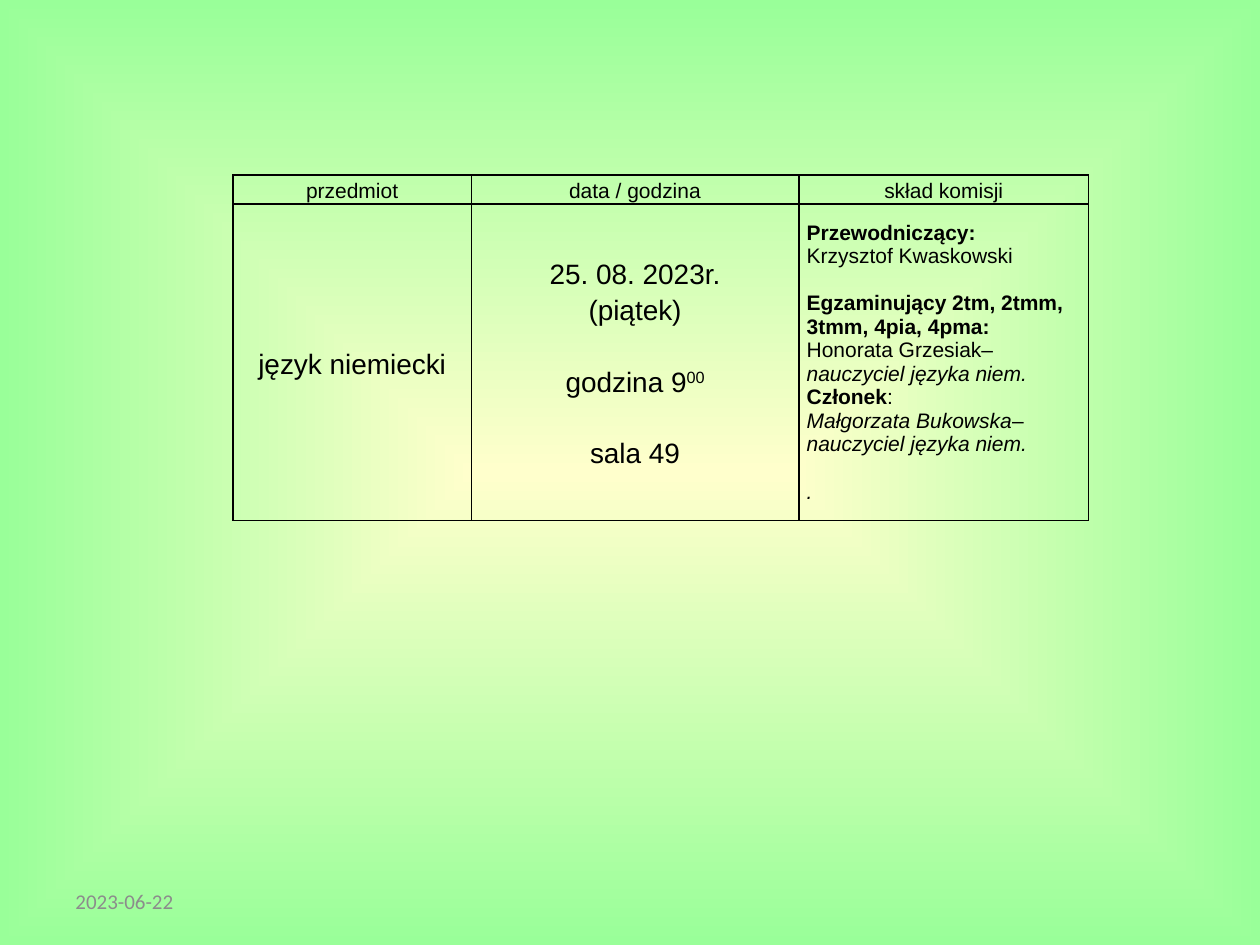
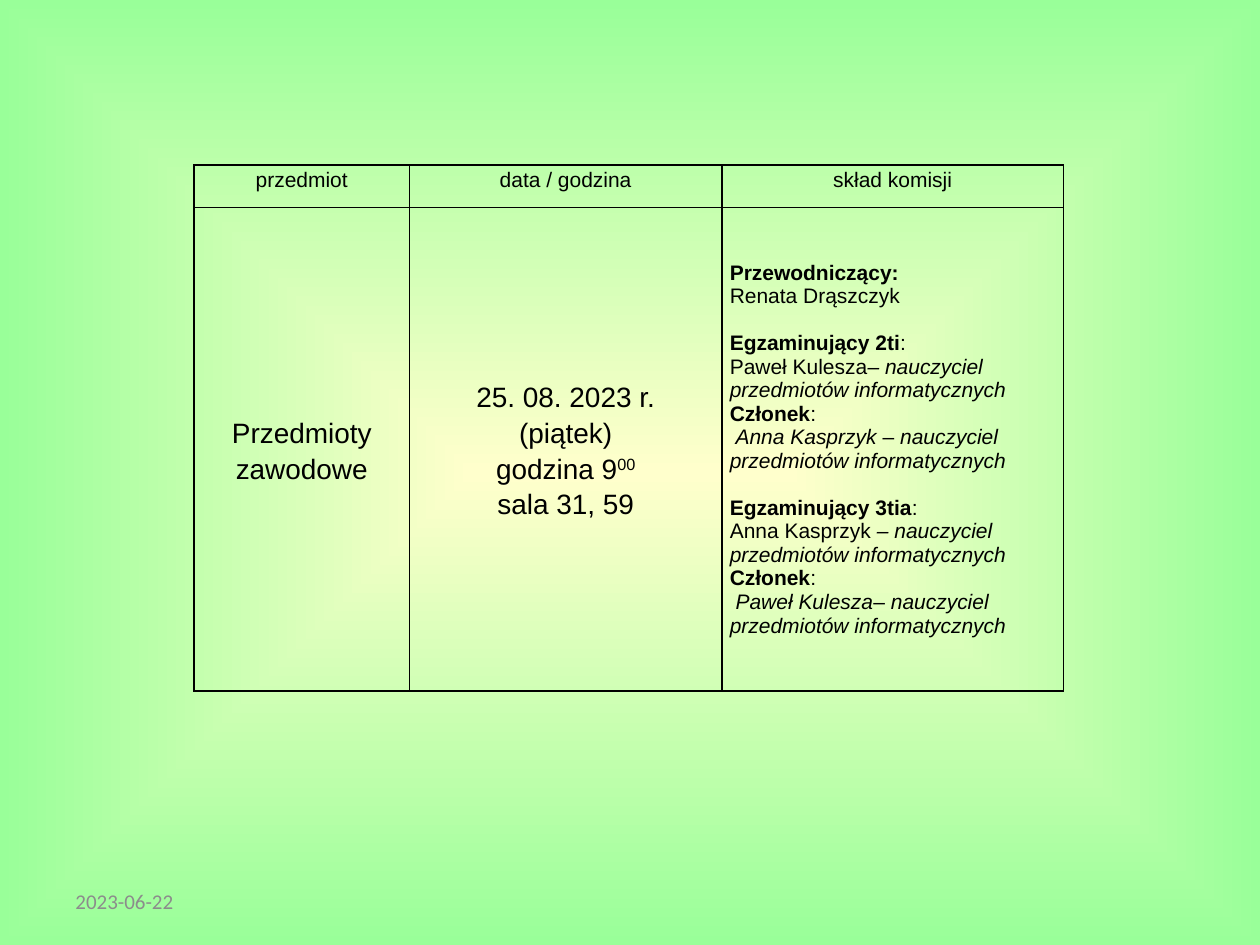
from dataclasses import dataclass

from lxml.etree import SubElement
from pptx import Presentation
from pptx.dml.color import RGBColor
from pptx.enum.text import MSO_ANCHOR, PP_ALIGN
from pptx.oxml.ns import qn
from pptx.util import Pt


@dataclass(frozen=True)
class Theme:
    center: RGBColor = RGBColor(0xFF, 0xFF, 0xCC)
    edge: RGBColor = RGBColor(0x99, 0xFF, 0x99)
    text: RGBColor = RGBColor(0, 0, 0)
    muted: RGBColor = RGBColor(0x8C, 0x8C, 0x8C)
    table_font: str = "Arial"
    date_font: str = "Calibri"
    small: int = 12
    large: int = 16
    spacing: float = 1.15
    border: float = 1
    cell_inset: float = 4.5


@dataclass(frozen=True)
class Line:
    """A paragraph: runs are (text, style), where style holds b, i or ^ (raised)."""
    runs: tuple
    gap: bool = False
    indent: float = 0


def plain(text, gap=False):
    return Line(((text, ""),), gap)


def bold(text, gap=False):
    return Line(((text, "b"),), gap)


def italic(text, gap=False):
    return Line(((text, "i"),), gap)


def role(name, gap=False):
    return Line(((name, "b"), (":", "")), gap)


def hour(gap=False):
    return Line((("godzina 9", ""), ("00", "^")), gap)


class Deck:
    def __init__(self, theme):
        self.theme = theme
        self.presentation = Presentation()
        self.presentation.slide_width = Pt(720)
        self.presentation.slide_height = Pt(540)
        self.slide = None
        self.paint_master()

    def paint_master(self):
        master = self.presentation.slide_master
        fill = master.background.fill
        fill.gradient()
        for stop, color in zip(fill.gradient_stops, (self.theme.center, self.theme.edge)):
            stop.color.rgb = color
        gradient = master.element.xpath("p:cSld/p:bg//a:gradFill")[0]
        gradient.remove(gradient.find(qn("a:lin")))
        shade = SubElement(gradient, qn("a:path"))
        shade.set("path", "shape")
        focus = SubElement(shade, qn("a:fillToRect"))
        for side in "ltrb":
            focus.set(side, "50000")

    def add_slide(self):
        blank = self.presentation.slide_layouts[6]
        self.slide = self.presentation.slides.add_slide(blank)
        self.add_date("2023-06-22")

    def add_date(self, text):
        box = self.slide.shapes.add_textbox(Pt(36), Pt(500.5), Pt(168), Pt(28.75))
        frame = box.text_frame
        frame.word_wrap = True
        frame.vertical_anchor = MSO_ANCHOR.MIDDLE
        frame.text = text
        font = frame.paragraphs[0].runs[0].font
        font.name = self.theme.date_font
        font.size = Pt(self.theme.small)
        font.color.rgb = self.theme.muted

    def add_exam_table(self, left, top, widths, heights, header_anchor, subject, schedule, board):
        frame = self.slide.shapes.add_table(
            2, 3, Pt(left), Pt(top), Pt(sum(widths)), Pt(sum(heights)))
        table = frame.table
        table.first_row = table.horz_banding = False
        for column, width in zip(table.columns, widths):
            column.width = Pt(width)
        for row, height in zip(table.rows, heights):
            row.height = Pt(height)
        for index, heading in enumerate(("przedmiot", "data / godzina", "skład komisji")):
            self.fill_cell(table.cell(0, index), [plain(heading)], self.theme.small,
                           anchor=header_anchor)
        self.fill_cell(table.cell(1, 0), [plain(subject)], self.theme.large)
        self.fill_cell(table.cell(1, 1), schedule, self.theme.large)
        self.fill_cell(table.cell(1, 2), board, self.theme.small, centered=False)

    def fill_cell(self, cell, lines, size, centered=True, anchor=MSO_ANCHOR.MIDDLE):
        self.outline_cell(cell)
        cell.fill.background()
        cell.vertical_anchor = anchor
        cell.margin_left = cell.margin_right = Pt(self.theme.cell_inset)
        cell.margin_top = cell.margin_bottom = 0
        frame = cell.text_frame
        for index, line in enumerate(lines):
            paragraph = frame.add_paragraph() if index else frame.paragraphs[0]
            self.write_line(paragraph, line, size, centered)

    def write_line(self, paragraph, line, size, centered):
        paragraph.alignment = PP_ALIGN.CENTER if centered else PP_ALIGN.LEFT
        if centered:
            paragraph.line_spacing = self.theme.spacing
        if line.gap:
            paragraph.space_before = Pt(20.4 if centered else 13.5)
        if line.indent:
            paragraph._p.get_or_add_pPr().set("indent", str(Pt(line.indent)))
        for text, style in line.runs:
            run = paragraph.add_run()
            run.text = text
            font = run.font
            font.name = self.theme.table_font
            font.size = Pt(size)
            font.color.rgb = self.theme.text
            font.bold = "b" in style
            font.italic = "i" in style
            if "^" in style:
                run._r.get_or_add_rPr().set("baseline", "30000")

    def outline_cell(self, cell):
        properties = cell._tc.get_or_add_tcPr()
        for side in ("lnL", "lnR", "lnT", "lnB"):
            border = SubElement(properties, qn(f"a:{side}"))
            border.set("w", str(Pt(self.theme.border)))
            solid = SubElement(border, qn("a:solidFill"))
            SubElement(solid, qn("a:srgbClr")).set("val", str(self.theme.text))


def add_german_exam(deck):
    deck.add_slide()
    deck.add_exam_table(
        133.2, 100.1, (136.1, 187.2, 165.6), (15.4, 180.7), MSO_ANCHOR.MIDDLE,
        "język niemiecki",
        [plain("25. 08. 2023r."), plain("(piątek)"), hour(gap=True), plain("sala 49", gap=True)],
        [
            bold("Przewodniczący:"),
            plain("Krzysztof Kwaskowski"),
            bold("Egzaminujący 2tm, 2tmm, 3tmm, 4pia, 4pma:", gap=True),
            Line((("Honorata Grzesiak– ", ""), ("nauczyciel języka niem.", "i"))),
            role("Członek"),
            Line((("Małgorzata Bukowska", "i"), ("– ", ""), ("nauczyciel języka niem.", "i"))),
            italic(".", gap=True),
        ])


def add_vocational_exam(deck):
    subject_teacher = "nauczyciel przedmiotów informatycznych"
    member_indent = 3.33
    deck.add_slide()
    deck.add_exam_table(
        110.9, 94.3, (123.1, 178.6, 195.1), (24.3, 276.2), MSO_ANCHOR.TOP,
        "Przedmioty zawodowe",
        [plain("25. 08. 2023 r."), plain("(piątek)"), hour(), plain("sala 31, 59")],
        [
            bold("Przewodniczący:"),
            plain("Renata Drąszczyk"),
            role("Egzaminujący 2ti", gap=True),
            Line((("Paweł Kulesza", ""), (f"– {subject_teacher}", "i"))),
            role("Członek"),
            Line((("Anna Kasprzyk ", "i"), ("– ", ""), (subject_teacher, "i")),
                 indent=member_indent),
            role("Egzaminujący 3tia", gap=True),
            Line((("Anna Kasprzyk ", ""), (f"– {subject_teacher}", "i"))),
            role("Członek"),
            Line((("Paweł Kulesza", "i"), ("– ", ""), ("nauczyciel", "i")),
                 indent=member_indent),
            italic("przedmiotów informatycznych"),
        ])


def main():
    deck = Deck(Theme())
    add_german_exam(deck)
    add_vocational_exam(deck)
    deck.presentation.save("out.pptx")


if __name__ == "__main__":
    main()
